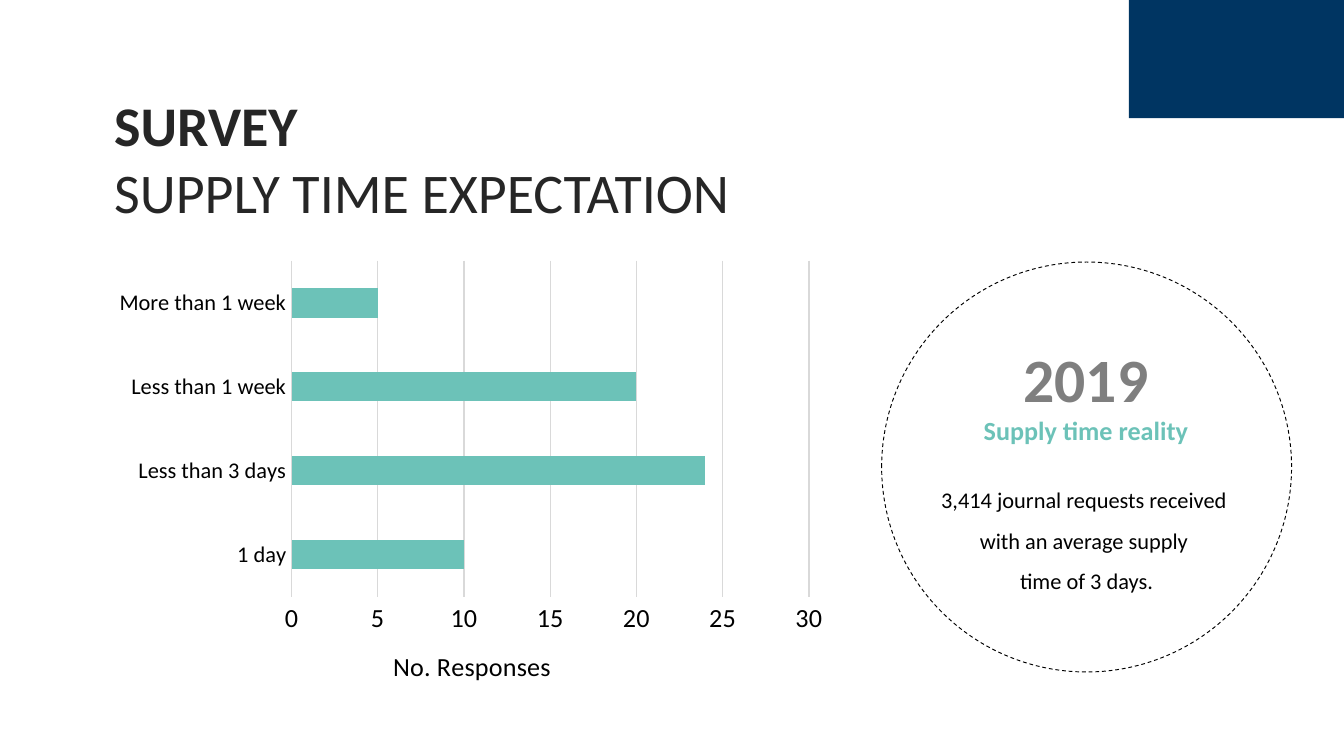
from lxml.etree import SubElement
from pptx import Presentation
from pptx.chart.data import CategoryChartData
from pptx.dml.color import RGBColor
from pptx.enum.chart import XL_CHART_TYPE, XL_TICK_MARK
from pptx.enum.dml import MSO_LINE
from pptx.enum.shapes import MSO_SHAPE
from pptx.enum.text import MSO_ANCHOR, MSO_AUTO_SIZE, PP_ALIGN
from pptx.oxml.ns import qn
from pptx.util import Inches, Pt

NAVY = RGBColor(0x00, 0x35, 0x62)
TEAL = RGBColor(0x6C, 0xC2, 0xB8)
INK = RGBColor(0x26, 0x26, 0x26)
GRAY = RGBColor(0x7F, 0x7F, 0x7F)
PALE = RGBColor(0xD9, 0xD9, 0xD9)
BLACK = RGBColor(0, 0, 0)
WHITE = RGBColor(255, 255, 255)

WIDTH = 10
HEIGHT = WIDTH * 9 / 16
LEFT = 0.78
CHART_WIDTH, CHART_HEIGHT = 5.45, 3.44
FONT = "Calibri"

TITLE = [("SURVEY", 30, INK, True, 1), ("SUPPLY TIME EXPECTATION", 30, INK, False, 1)]
REALITY = [("2019", 33, GRAY, True, 1.5), ("Supply time reality", 14, TEAL, True, 1)]
REQUESTS = [
    (line, 12, BLACK, False, 1.5)
    for line in ("3,414 journal requests received ", "with an average supply ", "time of 3 days.")
]
RESPONSES = {"1 day": 10, "Less than 3 days": 24, "Less than 1 week": 20, "More than 1 week": 5}
AXIS_TITLE = "No. Responses"
EDGES = {"xMode": "edge", "yMode": "edge"}
PLOT_LAYOUT = {"layoutTarget": "inner", **EDGES,
               "x": 1.39 / CHART_WIDTH, "y": 0.08 / CHART_HEIGHT,
               "w": 3.85 / CHART_WIDTH, "h": 2.5 / CHART_HEIGHT}
AXIS_TITLE_LAYOUT = {**EDGES, "x": 2.11 / CHART_WIDTH, "y": 2.93 / CHART_HEIGHT}


def apply(target, values):
    """Set every named attribute on the target."""
    for name, value in values.items():
        setattr(target, name, value)


def box(left, top, width, height):
    """Convert a rectangle in inches to lengths."""
    return [Inches(value) for value in (left, top, width, height)]


def style_font(font, size, color, bold=False):
    """Format a font."""
    apply(font, {"name": FONT, "size": Pt(size), "bold": bold})
    font.color.rgb = color


def write(shape, lines, align, side, edge):
    """Fill a shape with formatted paragraphs."""
    frame = shape.text_frame
    apply(frame, {"word_wrap": True, "auto_size": MSO_AUTO_SIZE.NONE,
                  "vertical_anchor": MSO_ANCHOR.TOP,
                  "margin_left": Inches(side), "margin_right": Inches(side),
                  "margin_top": Inches(edge), "margin_bottom": Inches(edge)})
    frame.text = "\n".join(line[0] for line in lines)
    for paragraph, (_, size, color, bold, spacing) in zip(frame.paragraphs, lines):
        apply(paragraph, {"alignment": align, "line_spacing": spacing, "space_before": Pt(0)})
        style_font(paragraph.runs[0].font, size, color, bold)


def add_shape(slide, kind, area, fill):
    """Add a flat filled shape without an outline."""
    shape = slide.shapes.add_shape(kind, *box(*area))
    shape.shadow.inherit = False
    shape.fill.solid()
    shape.fill.fore_color.rgb = fill
    shape.line.fill.background()
    return shape


def place(parent, index, values):
    """Give a chart element a manual position, with its layout at the index."""
    layout = parent.find(qn("c:layout"))
    if layout is None:
        layout = SubElement(parent, qn("c:layout"))
        parent.insert(index, layout)
    manual = SubElement(layout, qn("c:manualLayout"))
    for name, value in values.items():
        SubElement(manual, qn(f"c:{name}")).set("val", str(value))


def add_responses_chart(slide):
    """Add the bar chart of expected supply times."""
    data = CategoryChartData()
    data.categories = list(RESPONSES)
    data.add_series("Series 1", list(RESPONSES.values()))
    chart = slide.shapes.add_chart(
        XL_CHART_TYPE.BAR_CLUSTERED, *box(LEFT, 1.86, CHART_WIDTH, CHART_HEIGHT), data).chart
    apply(chart, {"has_legend": False, "has_title": False})
    style_font(chart.font, 14, BLACK)

    plot = chart.plots[0]
    apply(plot, {"gap_width": 182, "vary_by_categories": False})
    fill = plot.series[0].format.fill
    fill.solid()
    fill.fore_color.rgb = TEAL

    ticks = {"major_tick_mark": XL_TICK_MARK.NONE, "minor_tick_mark": XL_TICK_MARK.NONE}
    categories, values = chart.category_axis, chart.value_axis
    for axis, size in ((categories, 12), (values, 14)):
        apply(axis, ticks)
        style_font(axis.tick_labels.font, size, BLACK)
    apply(values, {"minimum_scale": 0, "maximum_scale": 30, "major_unit": 5,
                   "has_major_gridlines": True})
    for line in (categories.format.line, values.major_gridlines.format.line):
        line.color.rgb = PALE
        line.width = Pt(0.75)
    values.format.line.fill.background()

    title = values.axis_title
    title.text_frame.text = AXIS_TITLE
    style_font(title.text_frame.paragraphs[0].runs[0].font, 14, BLACK)
    place(title._element, 1, AXIS_TITLE_LAYOUT)
    place(plot._element.getparent(), 0, PLOT_LAYOUT)


def main():
    """Build the survey slide."""
    presentation = Presentation()
    apply(presentation, {"slide_width": Inches(WIDTH), "slide_height": Inches(HEIGHT)})
    slide = presentation.slides.add_slide(presentation.slide_layouts[5])

    corner = add_shape(slide, MSO_SHAPE.RECTANGLE, (0.84 * WIDTH, 0, 0.16 * WIDTH, 0.88), NAVY)
    slide.shapes._spTree.insert(2, corner._element)

    title = slide.shapes.title
    apply(title, dict(zip(("left", "top", "width", "height"), box(LEFT, 0.63, 7.41, 0.98))))
    write(title, TITLE, PP_ALIGN.LEFT, 0.07, 0.04)

    add_responses_chart(slide)

    circle = add_shape(slide, MSO_SHAPE.OVAL, (6.56, 1.95, 3.05, 3.05), WHITE)
    circle.line.color.rgb = BLACK
    apply(circle.line, {"width": Pt(0.5), "dash_style": MSO_LINE.DASH})

    for lines, area in ((REQUESTS, (6.78, 3.47, 2.61, 0.97)), (REALITY, (6.99, 2.21, 2.18, 1.17))):
        write(slide.shapes.add_textbox(*box(*area)), lines, PP_ALIGN.CENTER, 0, 0.05)

    presentation.save("out.pptx")


if __name__ == "__main__":
    main()
